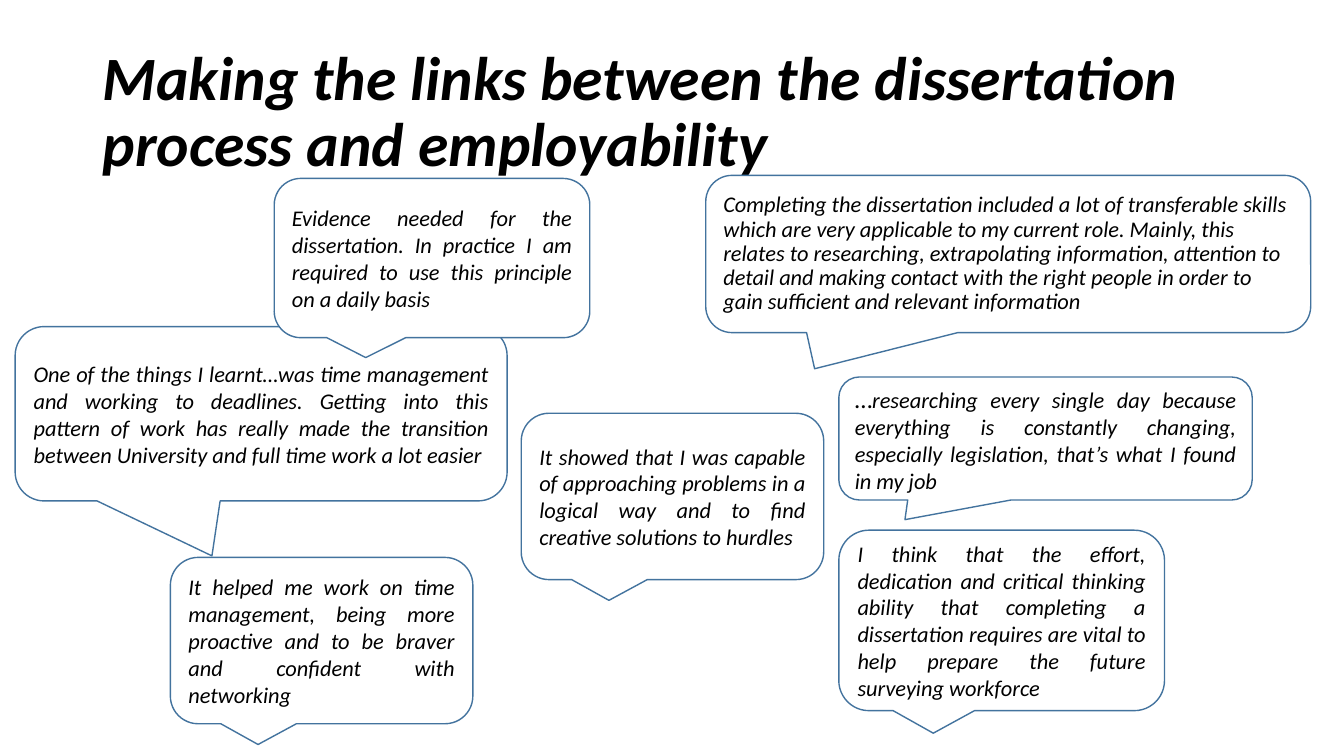
from pptx import Presentation
from pptx.dml.color import RGBColor
from pptx.enum.shapes import MSO_SHAPE as SHAPE
from pptx.enum.text import MSO_ANCHOR as ANCHOR, PP_ALIGN as ALIGN
from pptx.util import Inches, Pt

BLACK = RGBColor(0x00, 0x00, 0x00)
WHITE = RGBColor(0xFF, 0xFF, 0xFF)
BLUE = RGBColor(0x43, 0x73, 0x9E)


def write(frame, text, size=16, bold=False, align=ALIGN.JUSTIFY,
          line=None, before=None, lead=""):
    """Fill the frame with italic text, after an upright, larger lead if given."""
    frame.word_wrap = True
    frame.vertical_anchor = ANCHOR.MIDDLE
    para = frame.paragraphs[0]
    para.alignment = align
    if line:
        para.line_spacing = line
    if before:
        para.space_before = Pt(before)
    for part, points, slant in ((lead, 18, False), (text, size, True)):
        if part:
            run = para.add_run()
            run.text = part
            font = run.font
            font.name = "Calibri"
            font.size = Pt(points)
            font.bold = bold
            font.italic = slant
            font.color.rgb = BLACK


deck = Presentation()
deck.slide_width = Inches(13.33)
deck.slide_height = Inches(7.5)
slide = deck.slides.add_slide(deck.slide_layouts[6])

title = slide.shapes.add_textbox(
    Inches(0.92), Inches(0.4), Inches(11.5), Inches(1.45))
write(title.text_frame,
      "Making the links between the dissertation process and employability",
      size=44, bold=True, align=ALIGN.LEFT, line=0.9)

# Box (left, top, width, height), tail tip, filled, text, text format
TIP = (-0.21, 0.625)
quotes = [
    ((5.17, 4.1, 3, 1.65), TIP, True,
     "It showed that I was capable of approaching problems in a logical way "
     "and to find creative solutions to hurdles", {}),
    ((7, 1.74, 6, 1.56), (-0.32, 0.73), True,
     "Completing the dissertation included a lot of transferable skills which "
     "are very applicable to my current role. Mainly, this relates to "
     "researching, extrapolating information, attention to detail and making "
     "contact with the right people in order to gain sufficient and relevant "
     "information", {"align": ALIGN.LEFT, "line": 0.9, "before": 10}),
    ((8.32, 3.74, 4.1, 1.22), (-0.34, 0.66), False,
     "researching every single day because everything is constantly changing, "
     "especially legislation, that’s what I found in my job", {"lead": "…"}),
    ((0.15, 3.24, 4.88, 1.73), (-0.1, 0.815), False,
     "One of the things I learnt…was time management and working to deadlines. "
     "Getting into this pattern of work has really made the transition between "
     "University and full time work a lot easier", {}),
    ((2.72, 1.77, 3.13, 1.58), TIP, True,
     "Evidence needed for the dissertation. In practice I am required to use "
     "this principle on a daily basis", {}),
    ((8.32, 5.26, 3.23, 1.79), TIP, True,
     "I think that the effort, dedication and critical thinking ability that "
     "completing a dissertation requires are vital to help prepare the future "
     "surveying workforce", {}),
    ((1.69, 5.53, 3, 1.65), TIP, True,
     "It helped me work on time management, being more proactive and to be "
     "braver and confident with networking", {}),
]

for box, tip, filled, text, style in quotes:
    bubble = slide.shapes.add_shape(
        SHAPE.ROUNDED_RECTANGULAR_CALLOUT, *(Inches(n) for n in box))
    bubble.shadow.inherit = False
    bubble.adjustments[0], bubble.adjustments[1] = tip
    if filled:
        bubble.fill.solid()
        bubble.fill.fore_color.rgb = WHITE
    else:
        bubble.fill.background()
    bubble.line.color.rgb = BLUE
    bubble.line.width = Pt(1)
    write(bubble.text_frame, text, **style)

deck.save("out.pptx")
